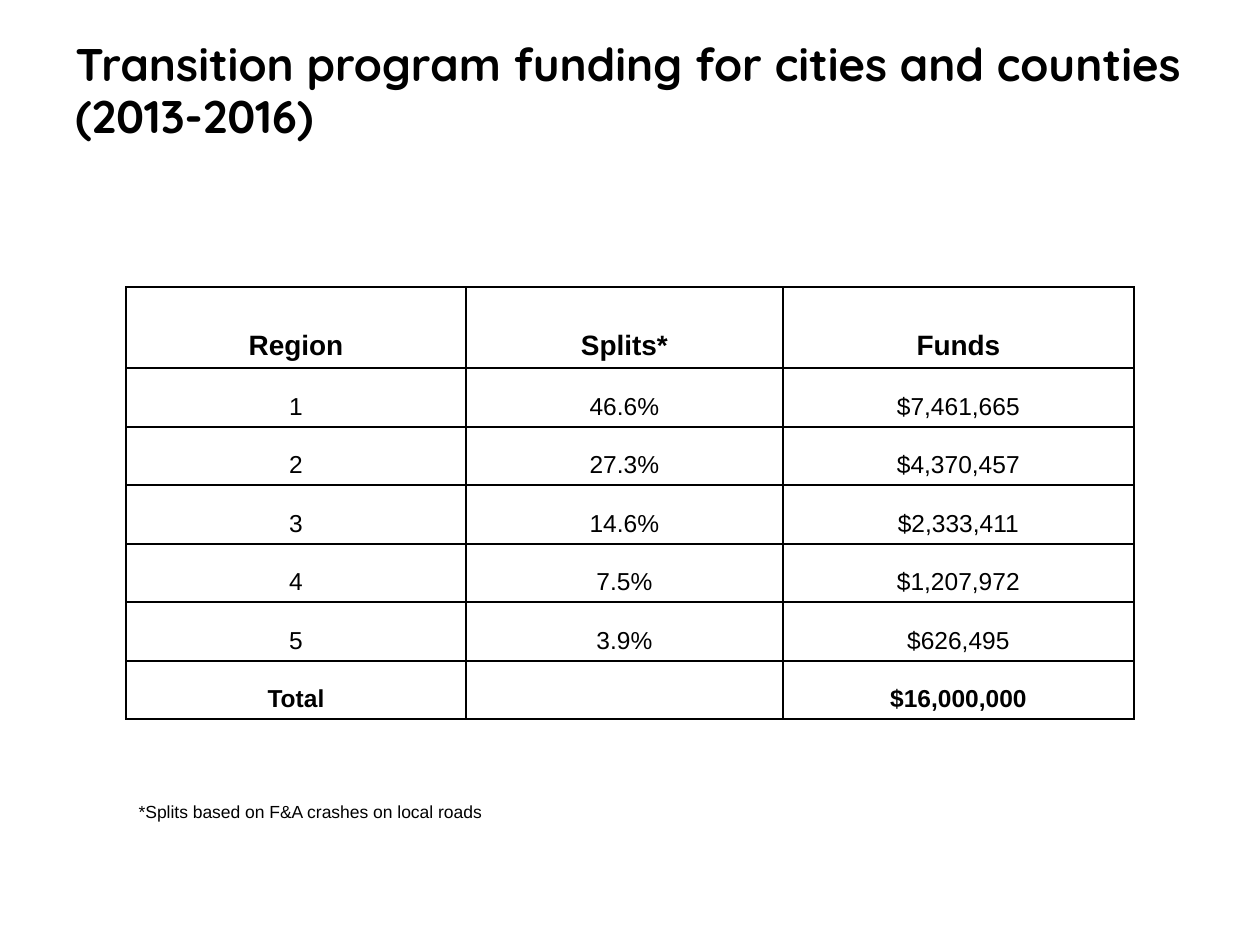
from dataclasses import dataclass

from lxml import etree
from pptx import Presentation
from pptx.dml.color import RGBColor
from pptx.enum.text import MSO_ANCHOR, PP_ALIGN
from pptx.oxml.ns import qn
from pptx.util import Emu, Pt

BOTTOM, MIDDLE = MSO_ANCHOR.BOTTOM, MSO_ANCHOR.MIDDLE
LEFT, CENTER = PP_ALIGN.LEFT, PP_ALIGN.CENTER
PX = 914400 / 126


@dataclass(frozen=True)
class Theme:
    ink: str = "000000"
    title_font: str = "Quicksand"
    body_font: str = "Arial"
    title: float = 26.1
    header: int = 16
    body: int = 14
    note: int = 10
    border: int = 1


THEME = Theme()
TITLE = "Transition program funding for cities and counties (2013-2016)"
NOTE = "*Splits based on F&A crashes on local roads"
FUNDING = [
    ("Region", "Splits*", "Funds"),
    ("1", "46.6%", "$7,461,665"),
    ("2", "27.3%", "$4,370,457"),
    ("3", "14.6%", "$2,333,411"),
    ("4", "7.5%", "$1,207,972"),
    ("5", "3.9%", "$626,495"),
    ("Total", "", "$16,000,000"),
]
COLUMN_WIDTHS = [340, 317, 351]
ROW_HEIGHTS = [108, 81] + [59, 58] * 3 + [110]


def px(n):
    return Emu(round(n * PX))


def write(tf, text, size, font=THEME.body_font, bold=False, align=LEFT):
    p = tf.paragraphs[0]
    p.alignment = align
    r = p.add_run()
    r.text = text
    formats = {"name": font, "size": Pt(size), "bold": bold}
    for name, value in formats.items():
        setattr(r.font, name, value)
    r.font.color.rgb = RGBColor.from_string(THEME.ink)
    return p


def add_title(s, text):
    sp = s.shapes.add_textbox(px(63), px(53), px(1134), px(78))
    tf = sp.text_frame
    tf.word_wrap = True
    tf.vertical_anchor = MIDDLE
    p = write(tf, text, THEME.title, THEME.title_font, True)
    p.line_spacing = 0.95


def set_borders(cell, sides):
    tc_pr = cell._tc.get_or_add_tcPr()
    for side in "LRTB":
        ln = etree.SubElement(tc_pr, qn(f"a:ln{side}"), w=str(Pt(THEME.border)))
        if side in sides:
            fill = etree.SubElement(ln, qn("a:solidFill"))
            etree.SubElement(fill, qn("a:srgbClr"), val=THEME.ink)
        else:
            etree.SubElement(ln, qn("a:noFill"))


def format_cell(cell, sides):
    set_borders(cell, sides)
    cell.fill.background()
    cell.vertical_anchor = BOTTOM


def add_funding_table(s):
    last = len(ROW_HEIGHTS) - 1
    frame = s.shapes.add_table(
        len(ROW_HEIGHTS), len(COLUMN_WIDTHS), px(126), px(179),
        px(sum(COLUMN_WIDTHS)), px(sum(ROW_HEIGHTS)))
    table = frame.table
    table.first_row = table.horz_banding = False
    for column, width in zip(table.columns, COLUMN_WIDTHS):
        column.width = px(width)
    for i, (row, height) in enumerate(zip(table.rows, ROW_HEIGHTS)):
        row.height = px(height)
        for cell in row.cells:
            format_cell(cell, {0: "B", last: "T"}.get(i, "LRTB"))
    for i in (0, last):
        table.cell(i, 0).merge(table.cell(i, len(COLUMN_WIDTHS) - 1))
    for i, values in enumerate(FUNDING, 1):
        size = THEME.header if i == 1 else THEME.body
        bold = i in (1, len(FUNDING))
        for j, value in enumerate(values):
            if value:
                write(table.cell(i, j).text_frame, value, size, bold=bold, align=CENTER)
    write(table.cell(last, 0).text_frame, NOTE, THEME.note)


def main():
    prs = Presentation()
    prs.slide_width, prs.slide_height = px(1260), px(945)
    s = prs.slides.add_slide(prs.slide_layouts[6])
    add_title(s, TITLE)
    add_funding_table(s)
    prs.save("out.pptx")


if __name__ == "__main__":
    main()
